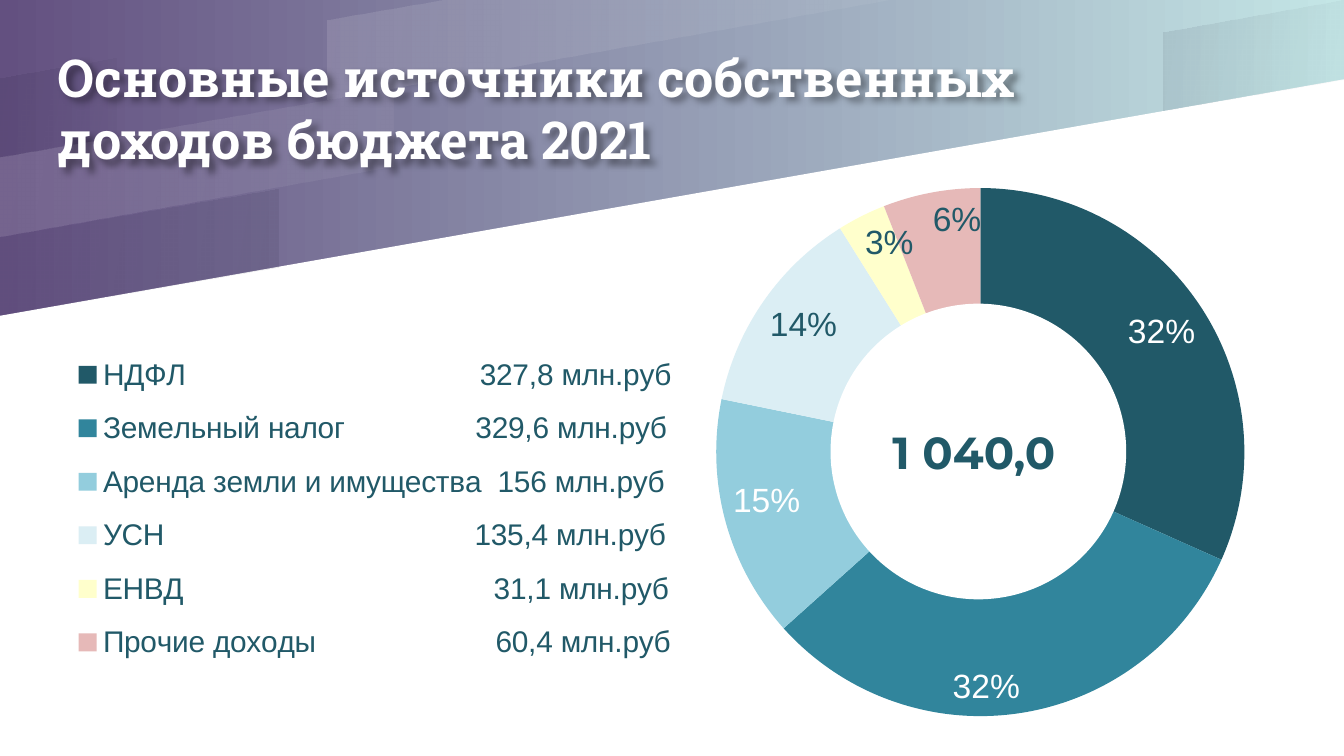
from dataclasses import dataclass

from lxml import etree
from pptx import Presentation
from pptx.chart.data import CategoryChartData
from pptx.dml.color import RGBColor
from pptx.enum import chart as charts, shapes, text
from pptx.oxml import parse_xml
from pptx.oxml.ns import nsdecls, qn
from pptx.util import Inches, Pt


@dataclass(frozen=True)
class Theme:
    white: str = "FFFFFF"
    ink: str = "215968"
    chart_ink: str = "205A59"
    shade: str = "00001A"
    backdrop: tuple[str, str] = ("635080", "C4E6E6")
    heading_font: str = "Roboto Slab"
    total_font: str = "Montserrat"
    body_font: str = "Arial"
    heading_size: int = 28
    total_size: int = 24
    label_size: int = 18
    legend_size: int = 16


@dataclass(frozen=True)
class Frame:
    left: float
    top: float
    width: float
    height: float


@dataclass(frozen=True)
class Band:
    points: tuple[tuple[float, float], ...]
    color: str
    alphas: tuple[int, int]


@dataclass(frozen=True)
class Source:
    name: str
    gap: int
    amount: str
    share: int
    color: str
    label_color: str
    label: str = ""

    @property
    def category(self) -> str:
        return self.name + " " * self.gap + self.amount


THEME = Theme()
CHART = Frame(0.2, 1, 9.61, 4.44)
PIE = Frame(5.25, 1.4, 4.09, 3.93)
LEGEND = Frame(0.54, 2.51, 4.5, 2.55)

BANDS = [
    Band(((3.32, 0), (2.44, 0.15), (2.44, 0.74), (6.65, 0)), THEME.white, (12, 5)),
    Band(((0, 0.58), (0, 1.17), (0.87, 1.02), (0.87, 0.43)), THEME.shade, (8, 2)),
    Band(((0, 1.76), (0, 2.35), (2.07, 1.99), (2.07, 1.4)), THEME.shade, (2, 8)),
    Band(((10, 0), (8.66, 0.24), (8.66, 0.82), (10, 0.59)), THEME.shade, (8, 2)),
    Band(((0, 1.17), (0, 1.76), (2.93, 1.24), (2.93, 0.66)), THEME.white, (12, 5)),
]
LOWER_AREA = ((0, 5.63), (10, 5.63), (10, 0.59), (0, 2.35))

SOURCES = [
    Source("НДФЛ", 36, "327,8 млн.руб", 32, "215968", THEME.white),
    Source("Земельный налог", 16, "329,6 млн.руб", 32, "31859C", THEME.white),
    Source("Аренда земли и имущества", 2, "156 млн.руб", 15, "93CDDD", THEME.white),
    Source("УСН", 38, "135,4 млн.руб", 13, "DBEEF4", THEME.ink, "14%"),
    Source("ЕНВД", 38, "31,1 млн.руб", 3, "FFFFCC", THEME.ink),
    Source("Прочие доходы", 22, "60,4 млн.руб", 6, "E6B9B8", THEME.ink),
]


def rgb(color: str) -> RGBColor:
    return RGBColor.from_string(color)


def style_font(font, family: str, size: int, color: str, bold: bool = False) -> None:
    font.name = family
    font.size = Pt(size)
    font.bold = bold
    font.color.rgb = rgb(color)


def paint(shape, color: str) -> None:
    shape.shadow.inherit = False
    shape.fill.solid()
    shape.fill.fore_color.rgb = rgb(color)
    shape.line.fill.background()


def draw_polygon(page, points: tuple[tuple[float, float], ...]):
    corners = [(Inches(x), Inches(y)) for x, y in points]
    builder = page.shapes.build_freeform(*corners[0])
    builder.add_line_segments(corners[1:], close=True)
    return builder.convert_to_shape()


def draw_band(page, band: Band) -> None:
    shape = draw_polygon(page, band.points)
    paint(shape, band.color)
    shape.fill.gradient()
    shape.fill.gradient_angle = 350
    for stop in shape.fill.gradient_stops:
        stop.color.rgb = rgb(band.color)
    colors = shape._element.spPr.iter(qn("a:srgbClr"))
    for color, alpha in zip(colors, band.alphas):
        etree.SubElement(color, qn("a:alpha"), val=str(alpha * 1000))


def draw_background(page) -> None:
    fill = page.background.fill
    fill.gradient()
    fill.gradient_angle = 0
    for stop, color in zip(fill.gradient_stops, THEME.backdrop):
        stop.color.rgb = rgb(color)
    paint(draw_polygon(page, LOWER_AREA), THEME.white)
    for band in BANDS:
        draw_band(page, band)


def draw_title(page, words: str) -> None:
    title = page.shapes.title
    title.left, title.top = Inches(0.43), Inches(0.14)
    title.width, title.height = Inches(9.06), Inches(1.32)
    frame = title.text_frame
    frame.text = words
    frame.auto_size = text.MSO_AUTO_SIZE.NONE
    frame.vertical_anchor = text.MSO_ANCHOR.MIDDLE
    frame.margin_left = frame.margin_right = 0
    frame.margin_top = frame.margin_bottom = 0
    para = frame.paragraphs[0]
    para.alignment = text.PP_ALIGN.LEFT
    para.line_spacing = 1.0
    for span in para.runs:
        style_font(span.font, THEME.heading_font, THEME.heading_size, THEME.white, True)
    title._element.spPr.append(parse_xml(
        f'<a:effectLst {nsdecls("a")}><a:outerShdw blurRad="50800" dist="38100" '
        'dir="2700000"><a:srgbClr val="000000"><a:alpha val="40000"/>'
        "</a:srgbClr></a:outerShdw></a:effectLst>"
    ))
    page.shapes._spTree.append(title._element)


def format_label(point, source: Source) -> None:
    label = point.data_label
    style_font(label.font, THEME.body_font, THEME.label_size, source.label_color)
    label.position = charts.XL_LABEL_POSITION.INSIDE_END
    if source.label:
        label.text_frame.text = source.label
        span = label.text_frame.paragraphs[0].runs[0]
        style_font(span.font, THEME.body_font, THEME.label_size, source.label_color)


def format_slices(series) -> None:
    for index, source in enumerate(SOURCES):
        point = series.points[index]
        point.format.fill.solid()
        point.format.fill.fore_color.rgb = rgb(source.color)
        point.format.line.fill.background()
        format_label(point, source)
    labels = series.data_labels
    style_font(labels.font, THEME.body_font, THEME.label_size, THEME.white)
    labels.show_percentage = True
    labels.show_value = False
    for label in labels._element.findall(qn("c:dLbl")):
        label.find(qn("c:showVal")).set("val", "0")
        label.find(qn("c:showPercent")).set("val", "1")


def make_layout(part: Frame, target: str = ""):
    bounds = {
        "x": (part.left - CHART.left) / CHART.width,
        "y": (part.top - CHART.top) / CHART.height,
        "w": part.width / CHART.width,
        "h": part.height / CHART.height,
    }
    sizes = "".join(f'<c:{side} val="{value:.4f}"/>' for side, value in bounds.items())
    return parse_xml(
        f'<c:layout {nsdecls("c")}><c:manualLayout>{target}'
        f'<c:xMode val="edge"/><c:yMode val="edge"/>{sizes}</c:manualLayout></c:layout>'
    )


def draw_chart(page) -> None:
    data = CategoryChartData()
    data.categories = [source.category for source in SOURCES]
    data.add_series("Series 1", [source.share for source in SOURCES])
    bounds = map(Inches, (CHART.left, CHART.top, CHART.width, CHART.height))
    chart = page.shapes.add_chart(charts.XL_CHART_TYPE.PIE, *bounds, data).chart
    chart.has_title = False
    style_font(chart.font, THEME.body_font, THEME.label_size, THEME.chart_ink)
    chart.plots[0].vary_by_categories = True
    format_slices(chart.plots[0].series[0])

    chart.has_legend = True
    legend = chart.legend
    legend.position = charts.XL_LEGEND_POSITION.RIGHT
    legend.include_in_layout = False
    style_font(legend.font, THEME.body_font, THEME.legend_size, THEME.ink)
    area = chart._chartSpace.find(".//" + qn("c:plotArea"))
    for holder in (area, legend._element):
        for layout in holder.findall(qn("c:layout")):
            holder.remove(layout)
    area.insert(0, make_layout(PIE, '<c:layoutTarget val="inner"/>'))
    legend._element.find(qn("c:legendPos")).addnext(make_layout(LEGEND))


def draw_total(page, words: str) -> None:
    hole = page.shapes.add_shape(
        shapes.MSO_SHAPE.OVAL, Inches(6.18), Inches(2.26), Inches(2.2), Inches(2.2)
    )
    paint(hole, THEME.white)
    box = page.shapes.add_textbox(Inches(6.34), Inches(3.11), Inches(1.81), Inches(0.5))
    frame = box.text_frame
    frame.word_wrap = True
    frame.text = words
    para = frame.paragraphs[0]
    para.alignment = text.PP_ALIGN.CENTER
    style_font(para.runs[0].font, THEME.total_font, THEME.total_size, THEME.ink, True)


def main() -> None:
    deck = Presentation()
    deck.slide_width = Inches(10)
    deck.slide_height = deck.slide_width * 9 // 16
    page = deck.slides.add_slide(deck.slide_layouts[5])
    draw_background(page)
    draw_title(page, "Основные источники собственных \vдоходов бюджета 2021")
    draw_chart(page)
    draw_total(page, "1 040,0")
    deck.save("out.pptx")


if __name__ == "__main__":
    main()
